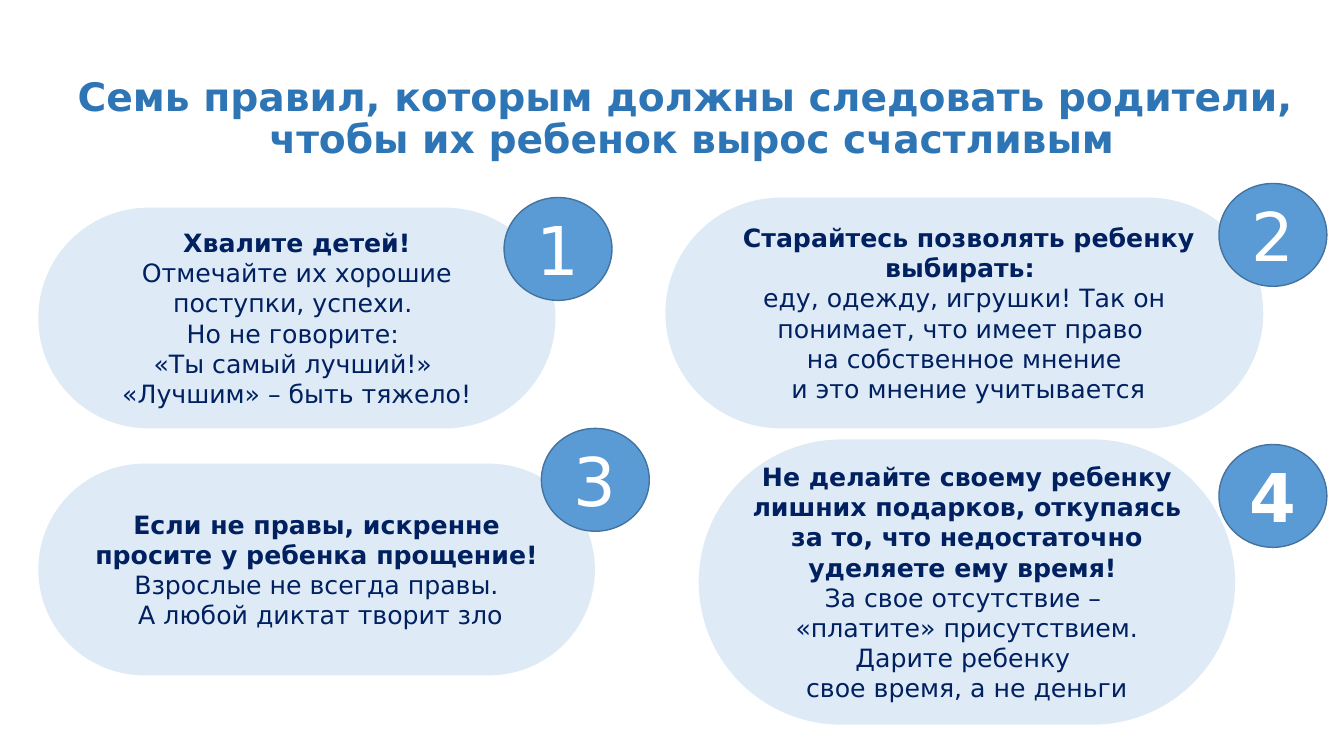
"""Build a slide with four numbered rules for parents."""
import pptx
import pptx.util
import pptx.dml.color
import pptx.enum.shapes
import pptx.enum.text
import lxml.etree
from dataclasses import dataclass

Inches = pptx.util.Inches
SHAPE = pptx.enum.shapes.MSO_SHAPE

TITLE = "Семь правил, которым должны следовать родители, \vчтобы их ребенок вырос счастливым"
TITLE_AREA = (0.56, 0.5, 12.6, 1.38)
BADGE_SIZE = (1.07, 1.02)

# Each paragraph pairs its bold part with its plain part.
RULES = [
    {"number": "1", "bold": False, "panel": (0.38, 2.06, 5.13, 2.19), "badge": (5, 1.96),
     "text": [("Хвалите детей!", ""),
              ("", "Отмечайте их хорошие поступки, успехи. "),
              ("", "Но не говорите: "),
              ("", "«Ты самый лучший!» "),
              ("", "«Лучшим» – быть тяжело!")]},
    {"number": "2", "bold": False, "panel": (6.6, 1.96, 5.93, 2.29), "badge": (12.09, 1.82),
     "text": [(" Старайтесь позволять ребенку выбирать: ", ""),
              ("", "еду, одежду, игрушки! Так он понимает, что имеет право "),
              ("", "на собственное мнение"),
              ("", " и это мнение учитывается")]},
    {"number": "3", "bold": False, "panel": (0.38, 4.6, 5.52, 2.1), "badge": (5.37, 4.25),
     "text": [("Если не правы, искренне просите у ребенка прощение! ", "Взрослые не всегда правы."),
              ("", " А любой диктат творит зло")]},
    {"number": "4", "bold": True, "panel": (6.93, 4.36, 5.32, 2.83), "badge": (12.09, 4.41),
     "text": [("Не делайте своему ребенку лишних подарков, откупаясь за то, "
               "что недостаточно уделяете ему время! ", ""),
              ("", "За свое отсутствие – "),
              ("", " «платите» присутствием. "),
              ("", "Дарите ребенку "),
              ("", "свое время, а не деньги")]},
]


@dataclass(frozen=True)
class Theme:
    """Colours and type sizes."""
    font: str = "DejaVu Sans"
    title: str = "2E75B6"
    panel: str = "DEEBF7"
    text: str = "002060"
    badge: str = "5B9BD5"
    badge_line: str = "43739E"
    number: str = "FFFFFF"
    title_size: int = 28
    text_size: int = 18
    number_size: int = 48


THEME = Theme()


def rgb(code):
    """Turn a hex code into a colour."""
    return pptx.dml.color.RGBColor.from_string(code)


def style(para, size, color, bold=None):
    """Centre a paragraph and set its font."""
    para.alignment = pptx.enum.text.PP_ALIGN.CENTER
    para.font.name = THEME.font
    para.font.size = pptx.util.Pt(size)
    para.font.color.rgb = rgb(color)
    para.font.bold = bold


def add_box(page, kind, area, fill):
    """Add a flat filled shape with middle-anchored text."""
    box = page.shapes.add_shape(kind, *map(Inches, area))
    box.shadow.inherit = False
    box.fill.solid()
    box.fill.fore_color.rgb = rgb(fill)
    box.text_frame.word_wrap = True
    box.text_frame.vertical_anchor = pptx.enum.text.MSO_ANCHOR.MIDDLE
    return box


def add_title(page):
    """Fill and place the title placeholder."""
    box = page.shapes.title
    box.left, box.top, box.width, box.height = map(Inches, TITLE_AREA)
    frame = box.text_frame
    frame.text = TITLE
    frame.word_wrap = True
    frame.auto_size = pptx.enum.text.MSO_AUTO_SIZE.NONE
    frame.vertical_anchor = pptx.enum.text.MSO_ANCHOR.MIDDLE
    para = frame.paragraphs[0]
    para.line_spacing = 0.9
    style(para, THEME.title_size, THEME.title, True)


def add_panel(page, rule):
    """Add the rounded panel with the wording of a rule."""
    box = add_box(page, SHAPE.ROUNDED_RECTANGLE, rule["panel"], THEME.panel)
    box.adjustments[0] = 0.5
    box.line.fill.background()
    frame = box.text_frame
    for index, parts in enumerate(rule["text"]):
        para = frame.add_paragraph() if index else frame.paragraphs[0]
        style(para, THEME.text_size, THEME.text)
        for words, bold in zip(parts, (True, False)):
            if words:
                span = para.add_run()
                span.text = words
                span.font.bold = bold


def add_badge(page, rule):
    """Add the circle with the number of a rule."""
    box = add_box(page, SHAPE.OVAL, rule["badge"] + BADGE_SIZE, THEME.badge)
    box.line.color.rgb = rgb(THEME.badge_line)
    box.line.width = pptx.util.Pt(1)
    para = box.text_frame.paragraphs[0]
    para.text = rule["number"]
    style(para, THEME.number_size, THEME.number, rule["bold"])


def main():
    """Build and save the slide."""
    deck = pptx.Presentation()
    deck.slide_width, deck.slide_height = Inches(13.33), Inches(7.5)
    page = deck.slides.add_slide(deck.slide_layouts[5])
    add_title(page)
    for add_part in (add_panel, add_badge):
        for rule in RULES:
            add_part(page, rule)
    deck.save("out.pptx")


if __name__ == "__main__":
    main()
